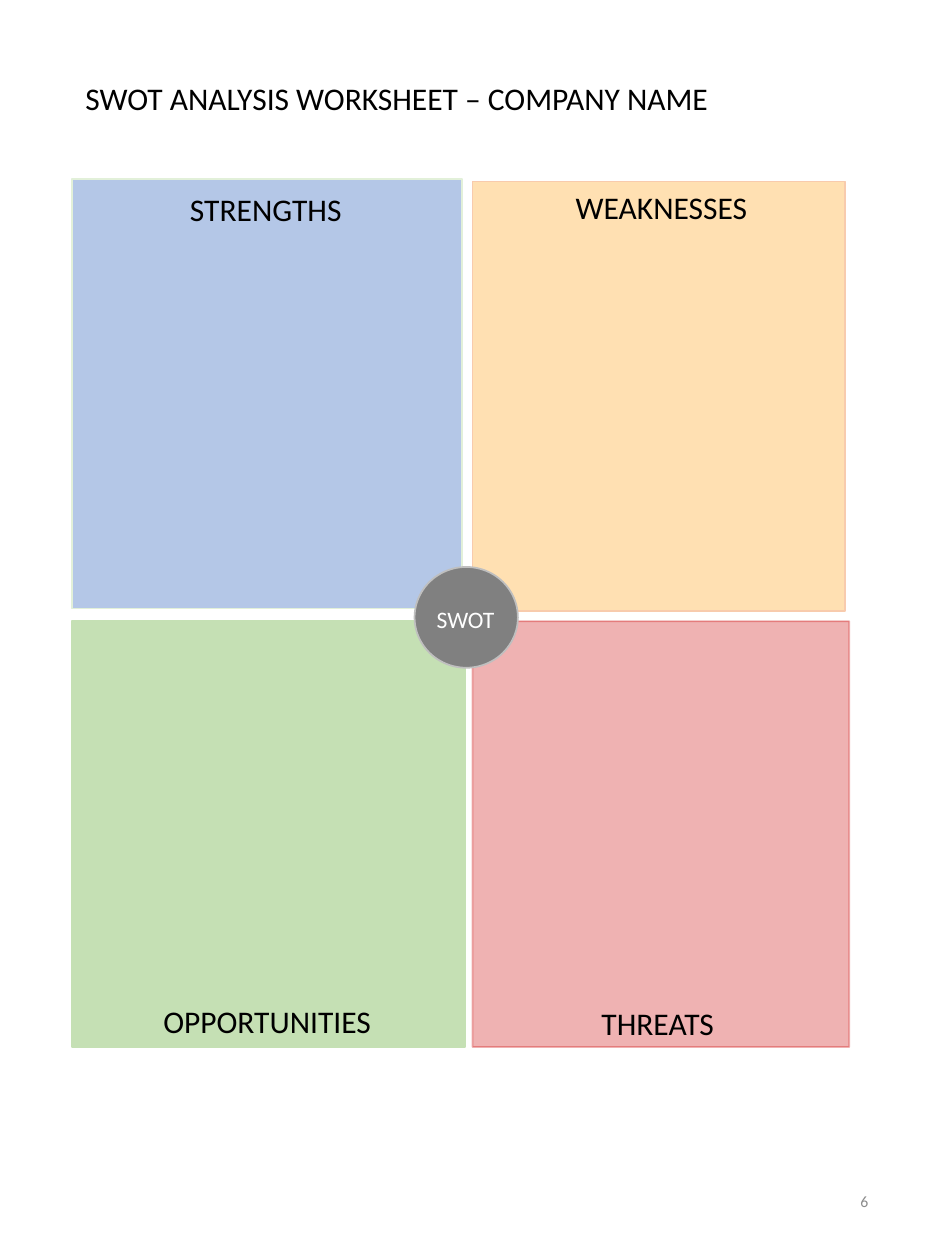
from dataclasses import dataclass

from lxml.etree import SubElement
from pptx import Presentation
from pptx.dml.color import RGBColor
from pptx.enum.shapes import MSO_SHAPE
from pptx.enum.text import MSO_ANCHOR, PP_ALIGN
from pptx.oxml.ns import qn
from pptx.util import Inches, Pt


@dataclass(frozen=True)
class Theme:
    font: str = "Calibri"
    heading_size: float = 18
    badge_size: float = 13.5
    number_size: float = 9
    line_width: float = 1
    text: str = "000000"
    badge_text: str = "FFFFFF"
    number: str = "8C8C8C"
    strengths: str = "B4C7E7"
    strengths_line: str = "E2F0D9"
    weaknesses: str = "FF9900"
    weaknesses_line: str = "F8CBAD"
    opportunities: str = "C5E0B4"
    threats: str = "CC0000"
    badge: str = "808080"
    badge_line: str = "BFBFBF"
    tint: int = 30


THEME = Theme()


def paint(color_format, color, opacity):
    """Set a solid colour on a fill, with opacity in percent."""
    color_format.solid()
    color_format.fore_color.rgb = RGBColor.from_string(color)
    if opacity < 100:
        element = color_format.fore_color._xFill.find(qn("a:srgbClr"))
        SubElement(element, qn("a:alpha"), val=str(opacity * 1000))


def add_panel(page, kind, bounds, fill, line, fill_opacity=100, line_opacity=100):
    panel = page.shapes.add_shape(kind, *map(Inches, bounds))
    panel.shadow.inherit = False
    paint(panel.fill, fill, fill_opacity)
    paint(panel.line.fill, line, line_opacity)
    panel.line.width = Pt(THEME.line_width)


def add_label(page, text, bounds, size=THEME.heading_size, color=THEME.text,
              align=PP_ALIGN.CENTER, anchor=MSO_ANCHOR.TOP, wrap=True):
    box = page.shapes.add_textbox(*map(Inches, bounds))
    box.text_frame.word_wrap = wrap
    box.text_frame.vertical_anchor = anchor
    para = box.text_frame.paragraphs[0]
    para.alignment = align
    span = para.add_run()
    span.text = text
    span.font.name = THEME.font
    span.font.size = Pt(size)
    span.font.color.rgb = RGBColor.from_string(color)


def add_quadrants(page):
    left, right, lower = 0.57, 3.75, 4.93
    tint = THEME.tint
    quadrants = [
        ((left, 1.42, 3.1, 3.41), THEME.strengths, THEME.strengths_line, 100, 100),
        ((left, lower, 3.12, 3.38), THEME.opportunities, THEME.opportunities, 100, 100),
        ((right, lower, 2.99, 3.38), THEME.threats, THEME.threats, tint, tint),
        ((right, 1.44, 2.96, 3.41), THEME.weaknesses, THEME.weaknesses_line, tint, 100),
    ]
    for bounds, fill, line, fill_opacity, line_opacity in quadrants:
        add_panel(page, MSO_SHAPE.RECTANGLE, bounds, fill, line, fill_opacity, line_opacity)

    headings = [
        ("STRENGTHS", (0.58, 1.46, 3.06, 0.4)),
        ("OPPORTUNITIES", (0.58, 7.9, 3.08, 0.4)),
        ("THREATS", (3.72, 7.92, 3, 0.4)),
        ("WEAKNESSES", (3.77, 1.44, 2.96, 0.4)),
    ]
    for text, bounds in headings:
        add_label(page, text, bounds)


def add_badge(page):
    add_panel(page, MSO_SHAPE.OVAL, (3.29, 4.5, 0.82, 0.8), THEME.badge, THEME.badge_line)
    add_label(page, "SWOT", (3.36, 4.75, 0.67, 0.33), THEME.badge_size,
              THEME.badge_text, wrap=False)


def main():
    deck = Presentation()
    deck.slide_width, deck.slide_height = Inches(7.5), Inches(10)
    page = deck.slides.add_slide(deck.slide_layouts[6])

    add_label(page, "6", (5.3, 9.27, 1.69, 0.53), THEME.number_size, THEME.number,
              PP_ALIGN.RIGHT, MSO_ANCHOR.MIDDLE)
    add_label(page, "SWOT ANALYSIS WORKSHEET – COMPANY NAME", (0.58, 0.58, 6.16, 0.4),
              align=PP_ALIGN.LEFT)
    add_quadrants(page)
    add_badge(page)
    deck.save("out.pptx")


if __name__ == "__main__":
    main()
